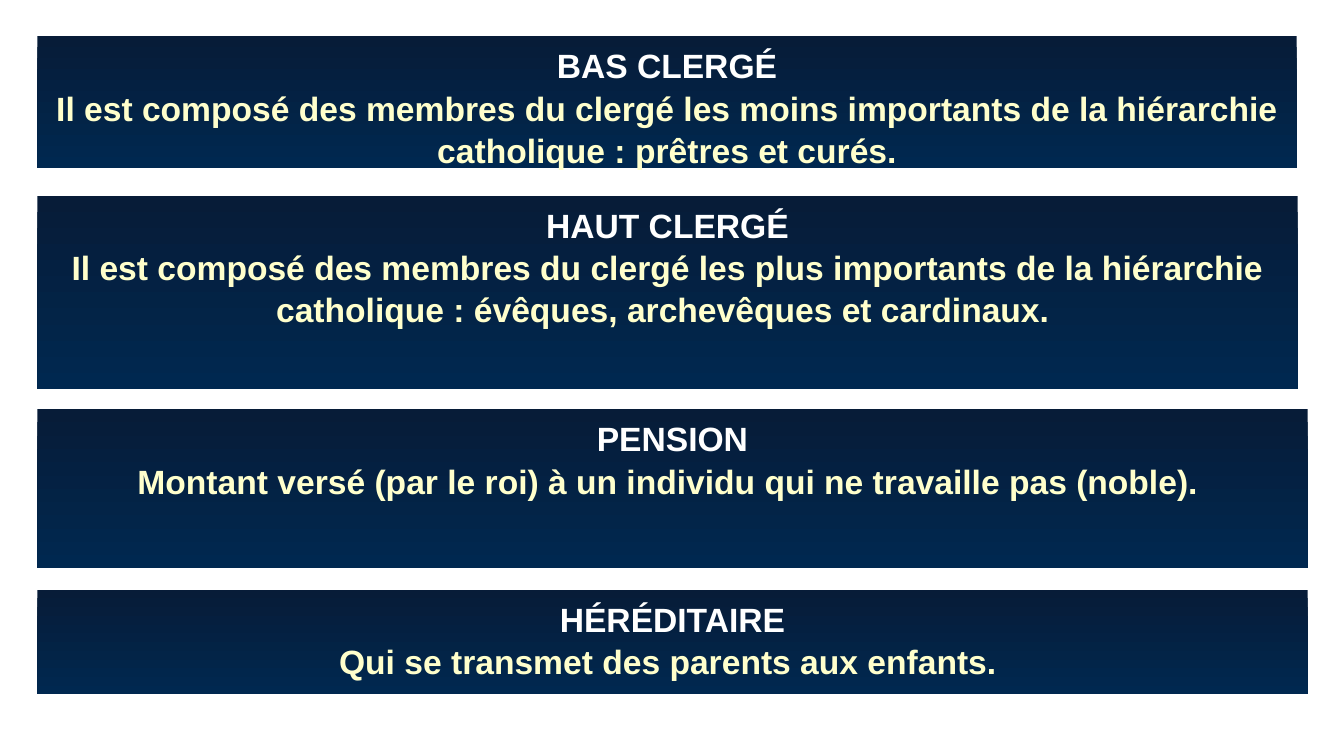
import pptx
import pptx.util
import pptx.dml.color
import pptx.enum.shapes
import pptx.enum.text

Inches = pptx.util.Inches
RGBColor = pptx.dml.color.RGBColor

NIGHT = RGBColor(0x07, 0x1C, 0x38)
NAVY = RGBColor(0x00, 0x28, 0x50)
WHITE = RGBColor(0xFF, 0xFF, 0xFF)
CREAM = RGBColor(0xFF, 0xFF, 0xCC)

LEFT = 0.37
FONT = {"name": "Arial", "size": pptx.util.Pt(24), "bold": True}
FRAME = {
    "word_wrap": True,
    "vertical_anchor": pptx.enum.text.MSO_ANCHOR.TOP,
    "margin_left": Inches(0.13),
    "margin_right": Inches(0.13),
    "margin_top": Inches(0.07),
    "margin_bottom": Inches(0.07),
}
LINE = {"alignment": pptx.enum.text.PP_ALIGN.CENTER, "line_spacing": 1.05}

CARDS = [
    (0.36, 12.49, 1.31, "BAS CLERGÉ",
     "Il est composé des membres du clergé les moins importants de la "
     "hiérarchie catholique : prêtres et curés."),
    (1.94, 12.5, 1.92, "HAUT CLERGÉ",
     "Il est composé des membres du clergé les plus importants de la "
     "hiérarchie catholique : évêques, archevêques et cardinaux. "),
    (4.06, 12.6, 1.58, "PENSION",
     "Montant versé (par le roi) à un individu qui ne travaille pas (noble). "),
    (5.85, 12.6, 1.04, "HÉRÉDITAIRE",
     "Qui se transmet des parents aux enfants. "),
]


def apply(item, values):
    for name, value in values.items():
        setattr(item, name, value)


def shade(shape):
    shape.shadow.inherit = False
    shape.line.fill.background()
    shape.fill.gradient()
    shape.fill.gradient_angle = 270
    for stop, color, place in zip(shape.fill.gradient_stops, (NIGHT, NAVY), (0, 1)):
        stop.color.rgb = color
        stop.position = place


def write(para, text, color):
    apply(para, LINE)
    run = para.add_run()
    run.text = text
    apply(run.font, FONT)
    run.font.color.rgb = color


def add_card(slide, top, width, height, term, meaning):
    card = slide.shapes.add_shape(
        pptx.enum.shapes.MSO_SHAPE.RECTANGLE,
        Inches(LEFT), Inches(top), Inches(width), Inches(height))
    shade(card)
    frame = card.text_frame
    apply(frame, FRAME)
    write(frame.paragraphs[0], term, WHITE)
    write(frame.add_paragraph(), meaning, CREAM)


def main():
    deck = pptx.Presentation()
    apply(deck, {"slide_width": Inches(13.33), "slide_height": Inches(7.5)})
    slide = deck.slides.add_slide(deck.slide_layouts[6])
    for card in CARDS:
        add_card(slide, *card)
    deck.save("out.pptx")


if __name__ == "__main__":
    main()
